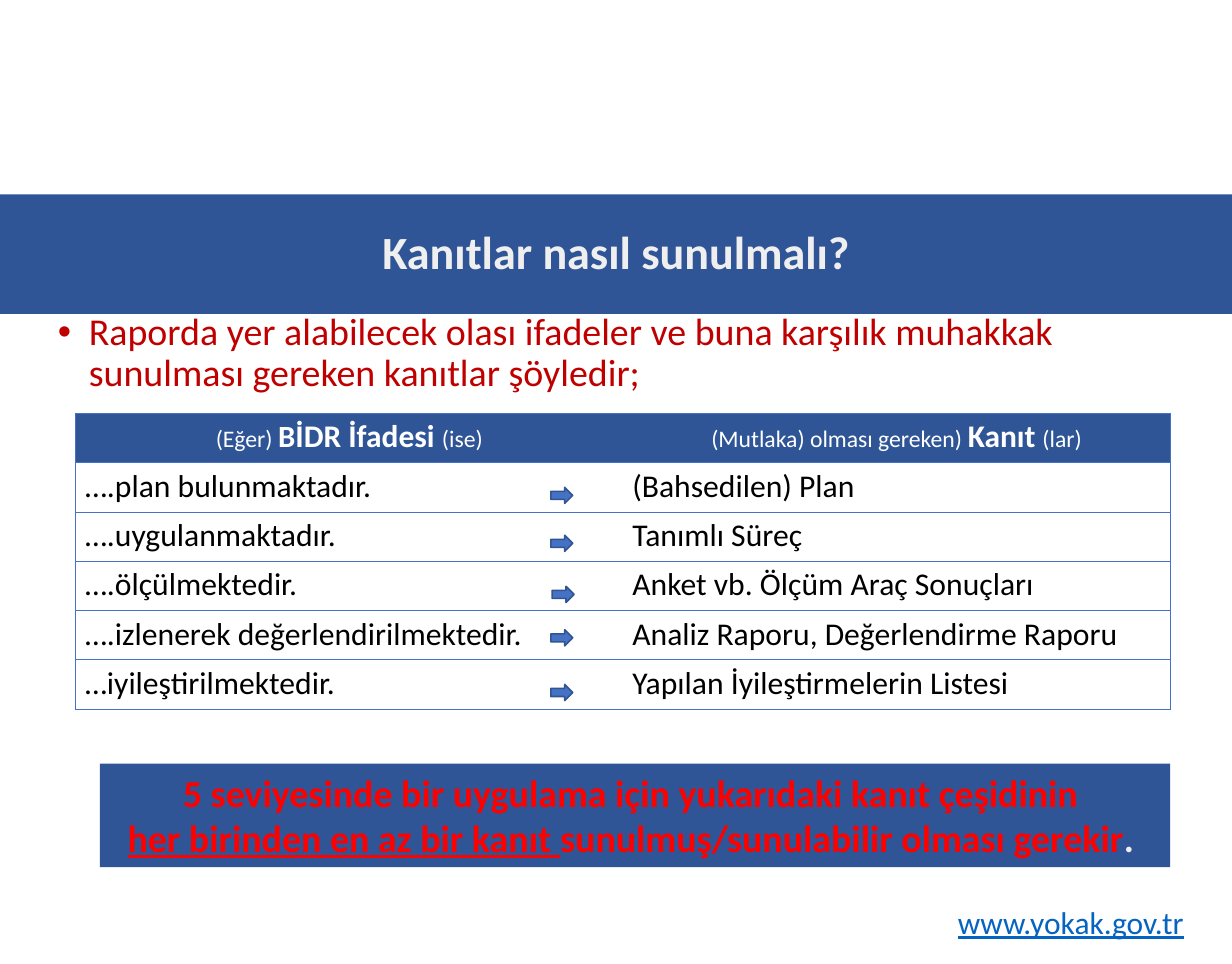
from lxml.etree import SubElement
from pptx import Presentation
from pptx.dml.color import RGBColor
from pptx.enum.shapes import MSO_SHAPE
from pptx.enum.text import MSO_ANCHOR, MSO_AUTO_SIZE, PP_ALIGN
from pptx.oxml.ns import qn
from pptx.util import Cm, Pt

COLORS = {
    "band": "2F5597", "pale": "EFEFEF", "dark_red": "C00000", "red": "FF0000",
    "white": "FFFFFF", "black": "000000", "grid": "4472C4",
    "arrow_line": "325491", "link": "0563C1",
}
FONT = "Calibri"

HEADER = [
    [("(Eğer) ", 15, False), ("B", 19.5, True), ("İDR İfadesi ", 19.9, True),
     ("(ise)", 15, False)],
    [("(Mutlaka) olması gereken) ", 15, False), ("Kanıt", 19.9, True),
     (" ", 19, False), ("(lar)", 15, False)],
]
# Statement, evidence, then the offset of the arrow from the table's corner
ROWS = [
    ("….plan bulunmaktadır.", "(Bahsedilen) Plan", 10.61, 1.65),
    ("….uygulanmaktadır.", "Tanımlı Süreç", 10.61, 2.72),
    ("….ölçülmektedir.", "Anket vb. Ölçüm Araç Sonuçları", 10.64, 3.86),
    ("….izlenerek değerlendirilmektedir.", "Analiz Raporu, Değerlendirme Raporu",
     10.61, 4.83),
    ("…iyileştirilmektedir.", "Yapılan İyileştirmelerin Listesi", 10.61, 6.05),
]


def rgb(name):
    return RGBColor.from_string(COLORS[name])


def fill_with(target, color):
    target.fill.solid()
    target.fill.fore_color.rgb = rgb(color)


def add_run(paragraph, text, size, color, bold=False, underline=False):
    run = paragraph.add_run()
    run.text = text
    font = run.font
    font.name, font.size = FONT, Pt(size)
    font.bold, font.underline = bold, underline
    font.color.rgb = rgb(color)


def place(shape, left, top, width, height):
    shape.left, shape.top = Cm(left), Cm(top)
    shape.width, shape.height = Cm(width), Cm(height)


def add_title(slide, left, top, width, height):
    title = slide.shapes.title
    place(title, left, top, width, height)
    fill_with(title, "band")
    frame = title.text_frame
    frame.auto_size = MSO_AUTO_SIZE.NONE
    frame.vertical_anchor = MSO_ANCHOR.MIDDLE
    paragraph = frame.paragraphs[0]
    paragraph.alignment = PP_ALIGN.CENTER
    paragraph.line_spacing = 0.9
    add_run(paragraph, "Kanıtlar nasıl sunulmalı?", 29.2, "pale", bold=True)


def add_intro(slide, left, top, width, height):
    body = slide.placeholders[1]
    place(body, left, top, width, height)
    frame = body.text_frame
    frame.auto_size = MSO_AUTO_SIZE.NONE
    paragraph = frame.paragraphs[0]
    paragraph.line_spacing = 0.9
    paragraph.space_before = Pt(0)
    properties = paragraph._p.get_or_add_pPr()
    properties.set("marL", str(Cm(0.69)))
    properties.set("indent", str(Cm(-0.69)))
    SubElement(properties, qn("a:buFont"), typeface="Arial")
    SubElement(properties, qn("a:buChar"), char="•")
    add_run(paragraph, "Raporda yer alabilecek olası ifadeler ve buna karşılık "
            "muhakkak sunulması gereken kanıtlar şöyledir;", 24, "dark_red")


def draw_borders(cell, open_side):
    """Rule the cell on every side but the one facing the other column."""
    properties = cell._tc.get_or_add_tcPr()
    for side in ("lnL", "lnR", "lnT", "lnB"):
        line = SubElement(properties, qn(f"a:{side}"), w=str(Pt(0.5)))
        if side == open_side:
            SubElement(line, qn("a:noFill"))
        else:
            solid = SubElement(line, qn("a:solidFill"))
            SubElement(solid, qn("a:srgbClr"), val=COLORS["grid"])


def add_arrow(slide, left, top):
    arrow = slide.shapes.add_shape(MSO_SHAPE.RIGHT_ARROW, Cm(left), Cm(top),
                                   Cm(0.49), Cm(0.36))
    arrow.shadow.inherit = False
    fill_with(arrow, "grid")
    arrow.line.color.rgb = rgb("arrow_line")
    arrow.line.width = Pt(1)


def add_evidence_table(slide, left, top, width, height):
    table = slide.shapes.add_table(len(ROWS) + 1, 2, Cm(left), Cm(top),
                                   Cm(width), Cm(height)).table
    table.first_row = table.horz_banding = False
    body_rows = [[[(text, 20, False)] for text in row[:2]] for row in ROWS]
    for row_index, row in enumerate([HEADER] + body_rows):
        is_header = row_index == 0
        for column_index, runs in enumerate(row):
            cell = table.cell(row_index, column_index)
            cell.margin_left = cell.margin_right = Cm(0.21)
            cell.margin_top = cell.margin_bottom = Cm(0.1)
            draw_borders(cell, ("lnR", "lnL")[column_index])
            paragraph = cell.text_frame.paragraphs[0]
            if is_header:
                fill_with(cell, "band")
                paragraph.alignment = PP_ALIGN.CENTER
            else:
                cell.fill.background()
            for text, size, bold in runs:
                add_run(paragraph, text, size, "white" if is_header else "black", bold)
    # Arrows from statement to evidence
    for _, _, arrow_left, arrow_top in ROWS:
        add_arrow(slide, left + arrow_left, top + arrow_top)


def add_banner(slide, left, top, width, height):
    banner = slide.shapes.add_shape(MSO_SHAPE.RECTANGLE, Cm(left), Cm(top),
                                    Cm(width), Cm(height))
    banner.shadow.inherit = False
    fill_with(banner, "band")
    banner.line.fill.background()
    frame = banner.text_frame
    frame.word_wrap = True
    frame.vertical_anchor = MSO_ANCHOR.TOP
    first, second = frame.paragraphs[0], frame.add_paragraph()
    first.alignment = second.alignment = PP_ALIGN.CENTER
    add_run(first, "5 seviyesinde bir uygulama için yukarıdaki kanıt çeşidinin ",
            24, "red", bold=True)
    add_run(second, "her birinden en az bir kanıt ", 24, "red", bold=True, underline=True)
    add_run(second, "sunulmuş/sunulabilir olması gerekir", 24, "red", bold=True)
    add_run(second, ". ", 24, "pale", bold=True)


def add_address(slide, left, top, width, height):
    box = slide.shapes.add_textbox(Cm(left), Cm(top), Cm(width), Cm(height))
    box.text_frame.word_wrap = True
    add_run(box.text_frame.paragraphs[0], "www.yokak.gov.tr", 19.9, "link",
            underline=True)


def main():
    presentation = Presentation()
    presentation.slide_width = Cm(27.51)
    presentation.slide_height = Cm(21.52)
    slide = presentation.slides.add_slide(presentation.slide_layouts[1])
    add_title(slide, 0, 4.34, 27.51, 2.67)
    add_intro(slide, 1.04, 6.86, 25.43, 2.29)
    add_evidence_table(slide, 1.69, 9.23, 24.44, 6.6)
    add_banner(slide, 2.23, 17.05, 23.9, 2.31)
    add_address(slide, 21.14, 20.04, 5.92, 1.12)
    presentation.save("out.pptx")


if __name__ == "__main__":
    main()
